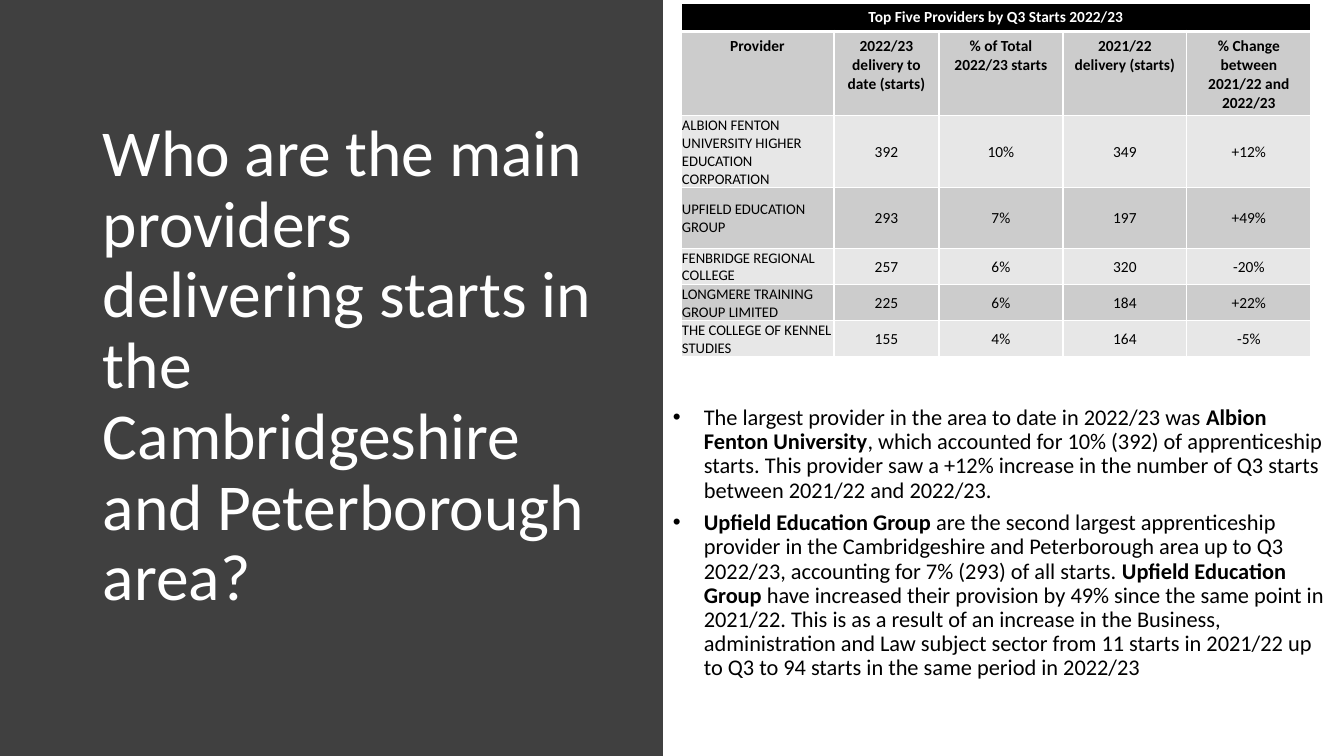
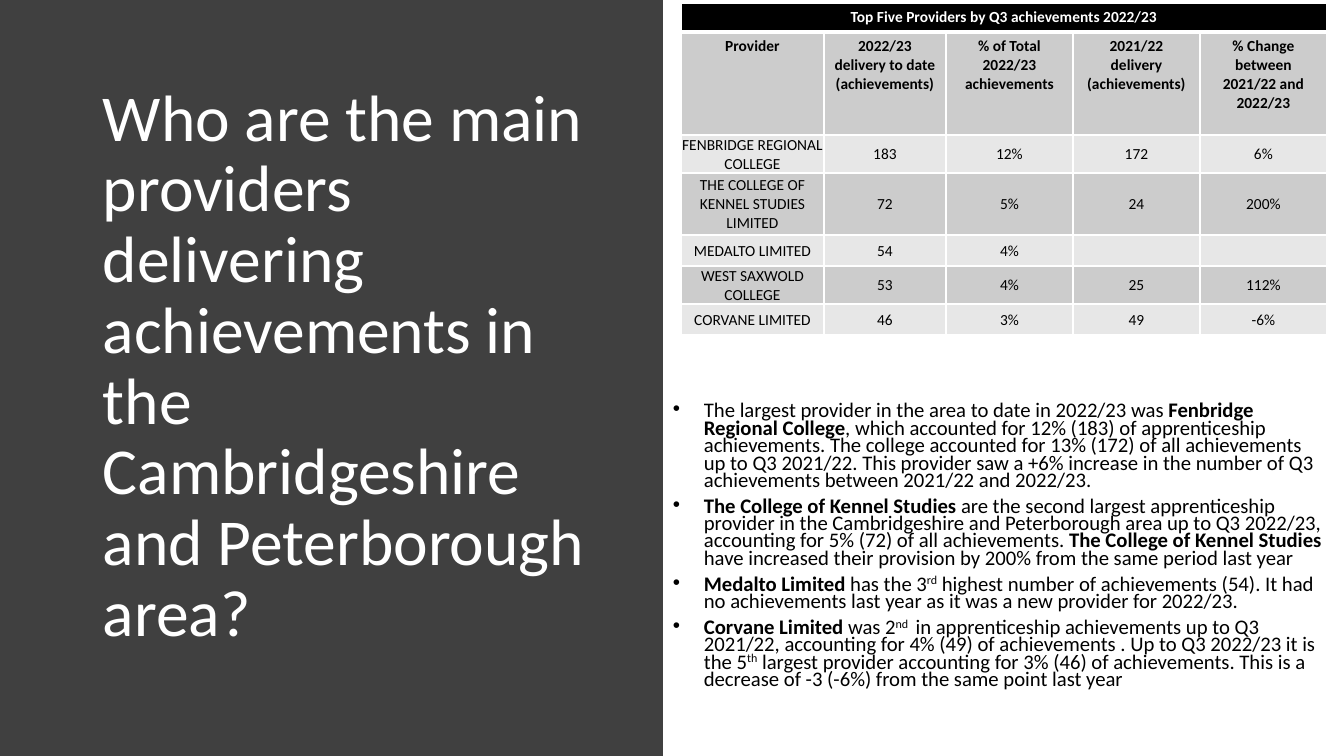
from pptx import Presentation
from pptx import util as u
from pptx.dml.color import RGBColor
from pptx.enum import shapes, text
from pptx.oxml import parse_xml
from pptx.oxml import ns

PX = u.Inches(1) / 100.8
FONT = "Calibri"
WHITE, BLACK, PANEL = "FFFFFF", "000000", "404040"
HEADER, BANDS = "CCCCCC", ("E7E7E7", "CCCCCC")
CENTER, LEFT = text.PP_ALIGN.CENTER, text.PP_ALIGN.LEFT
MIDDLE, TOP = text.MSO_ANCHOR.MIDDLE, text.MSO_ANCHOR.TOP
BOLD, SUPER = "bold", "super"


def px(length):
    return u.Emu(round(length * PX))


def color(code):
    return RGBColor.from_string(code)


class Report:
    def __init__(self):
        self.deck = Presentation()
        self.deck.slide_width, self.deck.slide_height = px(1344), px(756)
        self.page = None

    def add_page(self, title):
        """Start a slide with the dark panel and its title."""
        self.page = self.deck.slides.add_slide(self.deck.slide_layouts[6])
        panel = self.page.shapes.add_shape(
            shapes.MSO_SHAPE.RECTANGLE, 0, 0, px(663), px(756))
        panel.shadow.inherit = False
        panel.fill.solid()
        panel.fill.fore_color.rgb = color(PANEL)
        panel.line.fill.background()
        frame = self.text_box(93, 69, 528, 597)
        para = frame.paragraphs[0]
        para.line_spacing = 0.9
        self.span(para, title, 46.8, WHITE)

    def text_box(self, left, top, width, height):
        box = self.page.shapes.add_textbox(px(left), px(top), px(width), px(height))
        frame = box.text_frame
        frame.word_wrap = True
        frame.vertical_anchor = MIDDLE
        return frame

    def span(self, para, words, size, ink=BLACK, style=""):
        span = para.add_run()
        span.text = words
        span.font.name = FONT
        span.font.size = u.Pt(size)
        span.font.bold = style == BOLD
        span.font.color.rgb = color(ink)
        if style == SUPER:
            span._r.get_or_add_rPr().set("baseline", "30000")

    def bullets(self, items, size, line_spacing, bottom_margin):
        frame = self.text_box(656, 378, 681, 364)
        frame.margin_bottom = px(bottom_margin)
        for number, item in enumerate(items):
            para = frame.add_paragraph() if number else frame.paragraphs[0]
            para.line_spacing = line_spacing
            para.space_after = u.Pt(6)
            props = para._p.get_or_add_pPr()
            props.set("marL", str(px(38)))
            props.set("indent", str(px(-31)))
            props.append(parse_xml(f'<a:buFont {ns.nsdecls("a")} typeface="Arial"/>'))
            props.append(parse_xml(f'<a:buChar {ns.nsdecls("a")} char="•"/>'))
            for words, style in item:
                self.span(para, words, size, style=style)

    def table(self, title, headings, records, widths, heights,
              name_size=11, name_align=CENTER):
        """Draw a title row, a heading row and banded records."""
        grid = self.page.shapes.add_table(
            len(heights), len(widths), px(681), px(3),
            px(sum(widths)), px(sum(heights))).table
        grid.first_row = grid.horz_banding = False
        for column, width in zip(grid.columns, widths):
            column.width = px(width)
        for row, height in zip(grid.rows, heights):
            row.height = px(height)
        grid.cell(0, 0).merge(grid.cell(0, len(widths) - 1))
        title_row = [title] + [""] * (len(widths) - 1)
        for r, values in enumerate([title_row, headings, *records]):
            for c, words in enumerate(values):
                cell = grid.cell(r, c)
                self.borders(cell, top=3 if r == 1 else 1, bottom=1 if r else 3)
                if r == 0:
                    self.cell(cell, words, BLACK, WHITE, BOLD)
                elif r == 1:
                    self.cell(cell, words, HEADER, style=BOLD)
                else:
                    cell.margin_left = cell.margin_right = cell.margin_top = px(1)
                    cell.margin_bottom = 0
                    size, align = (11, CENTER) if c else (name_size, name_align)
                    self.cell(cell, words, BANDS[r % 2], size=size,
                              align=align, anchor=MIDDLE)

    def cell(self, cell, words, fill, ink=BLACK, style="", size=11,
             align=CENTER, anchor=TOP):
        cell.fill.solid()
        cell.fill.fore_color.rgb = color(fill)
        cell.vertical_anchor = anchor
        para = cell.text_frame.paragraphs[0]
        para.alignment = align
        if words:
            self.span(para, words, size, ink, style)
        else:
            para._p.get_or_add_endParaRPr().set("sz", str(size * 100))

    def borders(self, cell, top, bottom):
        props = cell._tc.get_or_add_tcPr()
        for side, weight in (("L", 1), ("R", 1), ("T", top), ("B", bottom)):
            props.append(parse_xml(
                f'<a:ln{side} {ns.nsdecls("a")} w="{u.Pt(weight)}"><a:solidFill>'
                f'<a:srgbClr val="{WHITE}"/></a:solidFill></a:ln{side}>'))


def headings(current, share, previous):
    return ["Provider", f"2022/23 delivery to date ({current})",
            f"% of Total 2022/23 {share}", f"2021/22 delivery ({previous})",
            "% Change between 2021/22 and 2022/23"]


def starts_page(report):
    report.add_page("Who are the main providers delivering starts in the "
                    "Cambridgeshire and Peterborough area?")
    report.bullets([
        [("The largest provider in the area to date in 2022/23 was ", ""),
         ("Albion Fenton University", BOLD),
         (", which accounted for 10% (392) of apprenticeship starts. This provider "
          "saw a +12% increase in the number of Q3 starts between 2021/22 and "
          "2022/23.", "")],
        [("Upfield Education Group ", BOLD),
         ("are the second largest apprenticeship provider in the Cambridgeshire and "
          "Peterborough area up to Q3 2022/23, accounting for 7% (293) of all "
          "starts. ", ""),
         ("Upfield Education Group ", BOLD),
         ("have increased their provision by 49% since the same point in 2021/22. "
          "This is as a result of an increase in the Business, administration and "
          "Law subject sector from 11 starts in 2021/22 up to Q3 to 94 starts in "
          "the same period in 2022/23", "")],
    ], size=16, line_spacing=0.9, bottom_margin=38)
    report.table(
        "Top Five Providers by Q3 Starts 2022/23",
        headings("starts", "starts", "starts"),
        [["ALBION FENTON UNIVERSITY HIGHER EDUCATION CORPORATION",
          "392", "10%", "349", "+12%"],
         ["UPFIELD EDUCATION GROUP", "293", "7%", "197", "+49%"],
         ["FENBRIDGE REGIONAL COLLEGE", "257", "6%", "320", "-20%"],
         ["LONGMERE TRAINING GROUP LIMITED", "225", "6%", "184", "+22%"],
         ["THE COLLEGE OF KENNEL STUDIES", "155", "4%", "164", "-5%"]],
        widths=[153, 105] + [124] * 3, heights=[25, 75, 31, 61] + [31] * 3,
        name_size=10.5, name_align=LEFT)


def achievements_page(report):
    report.add_page("Who are the main providers delivering achievements in the "
                    "Cambridgeshire and Peterborough area?")
    report.bullets([
        [("The largest provider in the area to date in 2022/23 was ", ""),
         ("Fenbridge Regional College", BOLD),
         (", which accounted for 12% (183) of apprenticeship achievements. The "
          "college accounted for 13% (172) of all achievements up to Q3 2021/22. "
          "This provider saw a +6% increase in the number of Q3 achievements "
          "between 2021/22 and 2022/23.", "")],
        [("The College of Kennel Studies ", BOLD),
         ("are the second largest apprenticeship provider in the Cambridgeshire and "
          "Peterborough area up to Q3 2022/23, accounting for 5% (72) of all "
          "achievements. ", ""),
         ("The College of Kennel Studies ", BOLD),
         ("have increased their provision by 200% from the same period last year",
          "")],
        [("Medalto Limited ", BOLD), ("has the 3", ""), ("rd", SUPER),
         (" highest number of achievements (54). It had no achievements last year "
          "as it was a new provider for 2022/23.", "")],
        [("Corvane Limited ", BOLD), ("was 2", ""), ("nd ", SUPER),
         (" in apprenticeship achievements up to Q3 2021/22, accounting for 4% (49) "
          "of achievements . Up to Q3 2022/23 it is the 5", ""), ("th", SUPER),
         (" largest provider accounting for 3% (46) of achievements. This is a "
          "decrease of -3 (-6%) from the same point last year", "")],
    ], size=14.8, line_spacing=0.7, bottom_margin=31)
    report.table(
        "Top Five Providers by Q3 achievements 2022/23",
        headings("achievements", "achievements", "achievements"),
        [["FENBRIDGE REGIONAL COLLEGE", "183", "12%", "172", "6%"],
         ["THE COLLEGE OF KENNEL STUDIES LIMITED", "72", "5%", "24", "200%"],
         ["MEDALTO LIMITED", "54", "4%", "", ""],
         ["WEST SAXWOLD COLLEGE", "53", "4%", "25", "112%"],
         ["CORVANE LIMITED", "46", "3%", "49", "-6%"]],
        widths=[143, 122] + [127] * 3, heights=[29, 103, 38, 62, 31, 38, 31])


def main():
    report = Report()
    starts_page(report)
    achievements_page(report)
    report.deck.save("out.pptx")


if __name__ == "__main__":
    main()
